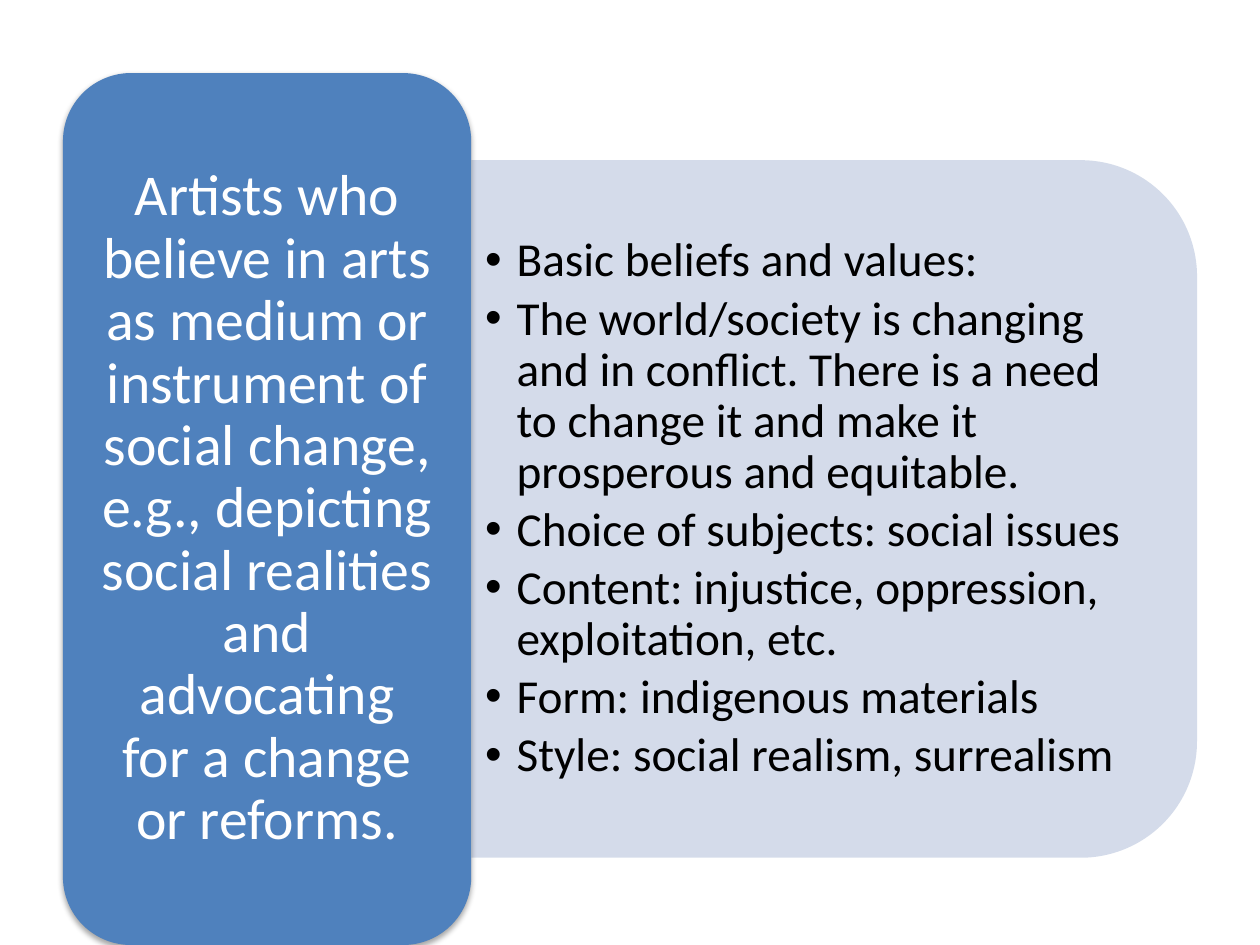
from dataclasses import dataclass

from lxml.etree import SubElement
from pptx import Presentation
from pptx.dml.color import RGBColor as RGB
from pptx.enum.shapes import MSO_SHAPE as Shape
from pptx.enum.text import MSO_ANCHOR as Anchor, MSO_AUTO_SIZE as Fit, PP_ALIGN as Align
from pptx.oxml.ns import qn
from pptx.util import Inches, Pt

CLAIM = ("Artists who believe in arts as medium or instrument of social change, "
         "e.g., depicting social realities and advocating for a change or reforms.")
POINTS = [
    "Basic beliefs and values:",
    "The world/society is changing and in conflict. There is a need to change it "
    "and make it prosperous and equitable.",
    "Choice of subjects: social issues",
    "Content: injustice, oppression, exploitation, etc.",
    "Form: indigenous materials",
    "Style: social realism, surrealism",
]


@dataclass(frozen=True)
class Theme:
    face: str = "Calibri"
    block: str = "4F81BD"
    panel: str = "D0D8E8"
    light: str = "FFFFFF"
    dark: str = "000000"
    large: float = 33
    small: float = 27
    pad: float = 0.0488  # share of a corner shape's short side kept clear of text


def put(item, values):
    for name, value in values.items():
        setattr(item, name, value)


class Deck:
    def __init__(self, theme):
        self.theme = theme
        self.file = Presentation()
        put(self.file, {"slide_width": Inches(10), "slide_height": Inches(7.5)})
        self.slide = self.file.slides.add_slide(self.file.slide_layouts[1])

    def area(self, left, top, width, height):
        """Turn shares of the slide's size into lengths."""
        wide, high = self.file.slide_width, self.file.slide_height
        return [int(share * size) for share, size in
                zip((left, top, width, height), (wide, high, wide, high))]

    def shape(self, kind, area, color, turn=0):
        left, top, width, height = area
        if turn == 90:
            shift = (width - height) // 2
            left, top, width, height = left + shift, top - shift, height, width
        item = self.slide.shapes.add_shape(kind, left, top, width, height)
        item.rotation = turn
        item.shadow.inherit = False
        item.fill.solid()
        item.fill.fore_color.rgb = RGB.from_string(color)
        item.line.fill.background()
        return item

    def fade(self, item, share):
        tint = item.element.spPr.find(".//" + qn("a:srgbClr"))
        SubElement(tint, qn("a:alpha"), val=str(int(share * 100000)))

    def shade(self, item):
        """Give the shape a soft shadow straight below it."""
        list_ = item.element.spPr.find(qn("a:effectLst"))
        cast = SubElement(list_, qn("a:outerShdw"), blurRad=str(Pt(3.1)),
                          dist=str(Pt(1.8)), dir="5400000", rotWithShape="0")
        tint = SubElement(cast, qn("a:srgbClr"), val=self.theme.dark)
        SubElement(tint, qn("a:alpha"), val="35000")

    def text(self, holder, area, lines, size, color, inset, align, gap=0, indent=None):
        """Fill a placeholder and bring it to the front."""
        self.slide.shapes.element.append(holder.element)
        put(holder, dict(zip(("left", "top", "width", "height"), area)))
        frame = holder.text_frame
        frame.text = "\n".join(lines)
        put(frame, {"word_wrap": True, "auto_size": Fit.NONE,
                    "vertical_anchor": Anchor.MIDDLE,
                    "margin_left": Inches(inset), "margin_right": Inches(inset),
                    "margin_top": Inches(inset / 2), "margin_bottom": Inches(inset / 2)})
        for para in frame.paragraphs:
            if indent:
                props = para._p.get_or_add_pPr()
                props.set("marL", str(Inches(indent)))
                props.set("indent", str(-Inches(indent)))
            put(para, {"alignment": align, "line_spacing": 0.9,
                       "space_before": Pt(0), "space_after": Pt(gap)})
            put(para.font, {"name": self.theme.face, "size": Pt(size)})
            para.font.color.rgb = RGB.from_string(color)


def main():
    theme = Theme()
    deck = Deck(theme)
    edge, top, wide, high = 0.05, 0.0773, 0.9, 0.9227
    split = 0.36 * wide
    left = deck.area(edge, top, split, high)
    right = deck.area(edge + split, top + 0.1 * high, wide - split, 0.8 * high)

    panel = deck.shape(Shape.ROUND_2_SAME_RECTANGLE, right, theme.panel, turn=90)
    deck.fade(panel, 0.9)
    x, y, w, h = right
    pad = int(h * theme.pad)
    title, body = deck.slide.placeholders
    deck.text(body, (x, y + pad, w - pad, h - 2 * pad), POINTS, theme.small,
              theme.dark, 0.11, Align.LEFT, gap=4, indent=0.25)

    block = deck.shape(Shape.ROUNDED_RECTANGLE, left, theme.block)
    deck.shade(block)
    x, y, w, h = left
    pad = int(w * theme.pad)
    deck.text(title, (x + pad, y + pad, w - 2 * pad, h - 2 * pad), [CLAIM],
              theme.large, theme.light, 0.14, Align.CENTER)
    deck.file.save("out.pptx")


if __name__ == "__main__":
    main()
